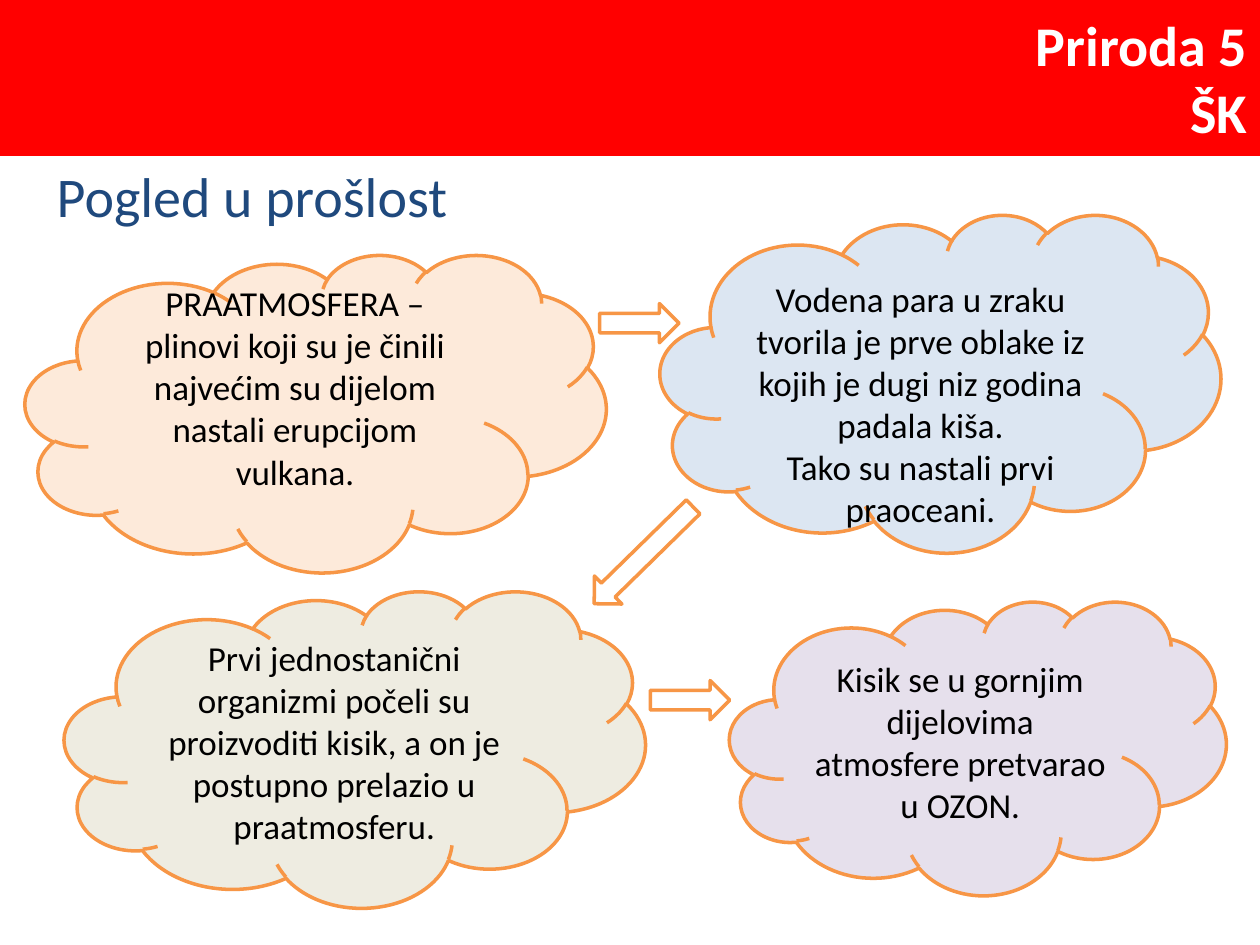
"""Build the slide on how the early atmosphere changed."""
import pptx
import pptx.util
import pptx.dml.color
import pptx.enum.shapes
import pptx.enum.text

Cm, Pt = pptx.util.Cm, pptx.util.Pt
Kind = pptx.enum.shapes.MSO_SHAPE
Align = pptx.enum.text.PP_ALIGN
Anchor = pptx.enum.text.MSO_ANCHOR

TITLE = "Pogled u prošlost"
HEADER = "Priroda 5\nŠK"
EDGE = "F79646"
PAD = 0.13
CLOUDS = [
    ("PRAATMOSFERA – plinovi koji su je činili najvećim su dijelom "
     "nastali erupcijom vulkana.",
     (0.51, 5.13, 11.71, 6.4), "FDEADA", PAD, 0.89),
    ("Vodena para u zraku tvorila je prve oblake iz kojih je dugi niz "
     "godina padala kiša.\nTako su nastali prvi praoceani.",
     (13.31, 4.32, 11.3, 6.81), "DCE6F2", 1.27, PAD),
    ("Kisik se u gornjim dijelovima atmosfere pretvarao u OZON.",
     (14.71, 12.12, 10.01, 5.92), "E6E0EC", PAD, PAD),
    ("Prvi jednostanični organizmi počeli su proizvoditi kisik, a on je "
     "postupno prelazio u praatmosferu.",
     (1.3, 11.91, 11.71, 6.38), "EEECE1", PAD, PAD),
]
ARROWS = [
    ((12.09, 6.12, 1.6, 0.79), 0),
    ((11.58, 10.8, 2.79, 0.79), 135.6),
    ((13.11, 13.72, 1.6, 0.79), 0),
]


def color(target, code):
    target.rgb = pptx.dml.color.RGBColor.from_string(code)


def write(frame, text, size, code, align, bold=False):
    frame.text = text
    frame.word_wrap = True
    for para in frame.paragraphs:
        para.alignment = align
        for run in para.runs:
            run.font.name = "Calibri"
            run.font.size = Pt(size)
            run.font.bold = bold
            color(run.font.color, code)


def draw(slide, kind, box, fill, line):
    shape = slide.shapes.add_shape(kind, *map(Cm, box))
    shape.shadow.inherit = False
    shape.fill.solid()
    color(shape.fill.fore_color, fill)
    color(shape.line.color, line)
    shape.line.width = Pt(2)
    return shape


def main():
    deck = pptx.Presentation()
    deck.slide_width, deck.slide_height = Cm(25.4), Cm(19.05)
    slide = deck.slides.add_slide(deck.slide_layouts[5])

    title = slide.shapes.title
    title.left, title.top, title.width, title.height = map(
        Cm, (0.89, 3.12, 12.8, 6.32))
    write(title.text_frame, TITLE, 32, "1F497D", Align.LEFT)
    title.text_frame.vertical_anchor = Anchor.TOP
    title.text_frame.auto_size = pptx.enum.text.MSO_AUTO_SIZE.NONE

    band = draw(slide, Kind.RECTANGLE, (0, 0, 25.4, 3.12), "FF0000", "FF0000")
    write(band.text_frame, HEADER, 32, "FFFFFF", Align.RIGHT, True)
    band.text_frame.vertical_anchor = Anchor.MIDDLE

    for text, box, fill, top, bottom in CLOUDS:
        frame = draw(slide, Kind.CLOUD, box, fill, EDGE).text_frame
        write(frame, text, 20, "000000", Align.CENTER)
        frame.vertical_anchor = Anchor.MIDDLE
        frame.margin_top, frame.margin_bottom = Cm(top), Cm(bottom)

    for box, turn in ARROWS:
        draw(slide, Kind.RIGHT_ARROW, box, "FFFFFF", EDGE).rotation = turn

    deck.save("out.pptx")


if __name__ == "__main__":
    main()
